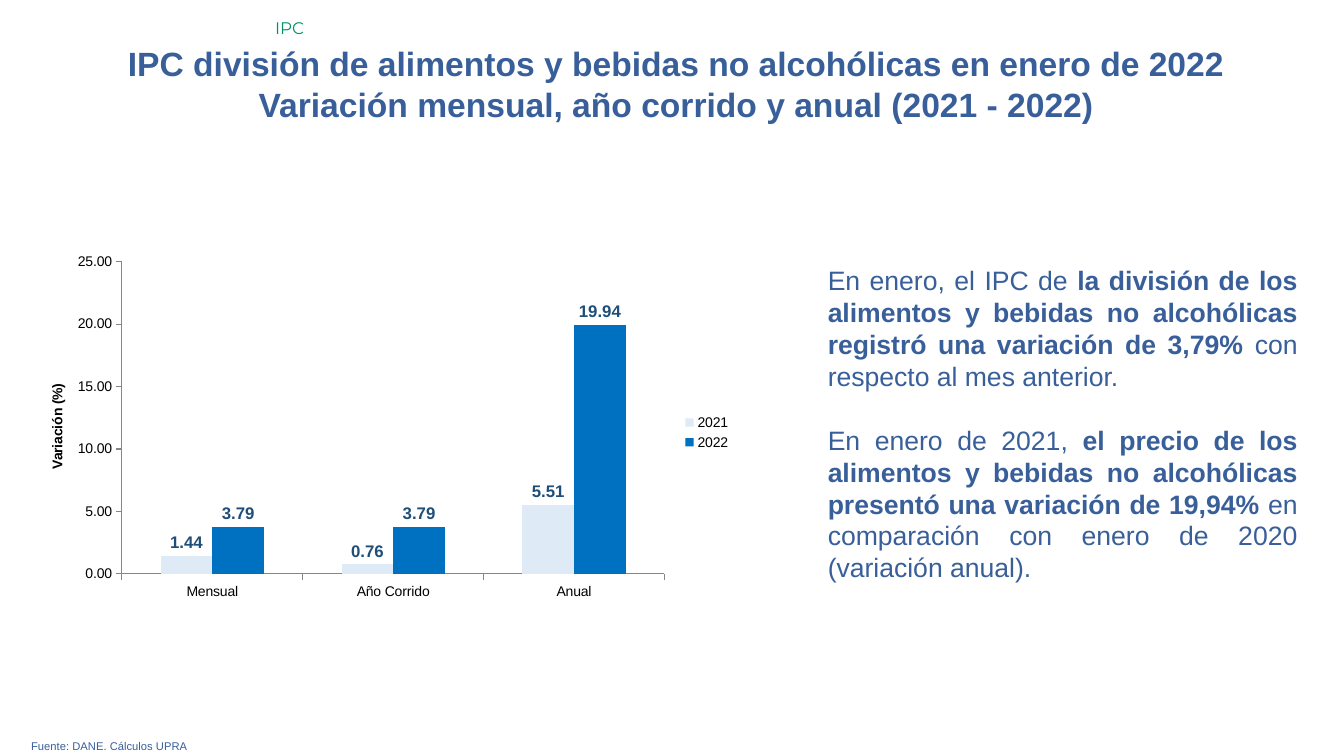
from lxml import etree
from pptx import Presentation
from pptx.chart.data import CategoryChartData
from pptx.dml.color import RGBColor
from pptx.enum.chart import (XL_CHART_TYPE, XL_LABEL_POSITION, XL_LEGEND_POSITION,
                             XL_TICK_LABEL_POSITION, XL_TICK_MARK)
from pptx.enum.text import MSO_ANCHOR, MSO_AUTO_SIZE, PP_ALIGN
from pptx.oxml import parse_xml
from pptx.oxml.ns import nsdecls, qn
from pptx.util import Inches, Pt

BLUE = RGBColor(0x39, 0x5F, 0x9B)
GREEN = RGBColor(0x00, 0x92, 0x67)
PALE_BAR = RGBColor(0xDE, 0xEB, 0xF7)
STRONG_BAR = RGBColor(0x00, 0x70, 0xC0)
LABEL_BLUE = RGBColor(0x1F, 0x4E, 0x79)
AXIS_GREY = RGBColor(0x86, 0x86, 0x86)
BLACK = RGBColor(0x00, 0x00, 0x00)


class SlideBuilder:
    """Places elements on a grid of 100 columns by 100 rows."""

    font_name = "Arial"
    number_format = "#,##0.00"

    def __init__(self, presentation):
        self.column = presentation.slide_width / 100
        self.row = presentation.slide_height / 100
        self.slide = presentation.slides.add_slide(presentation.slide_layouts[1])

    def area(self, left, top, width, height):
        return (round(left * self.column), round(top * self.row),
                round(width * self.column), round(height * self.row))

    def style(self, font, size, color, bold=False, name=None):
        font.name = name or self.font_name
        font.size = Pt(size)
        font.bold = bold
        font.color.rgb = color

    def fill_text(self, shape, paragraphs, size, color, align, gap=0, bold=False, name=None):
        """Each paragraph is a list of (text, bold) pieces."""
        frame = shape.text_frame
        frame.word_wrap = True
        frame.auto_size = MSO_AUTO_SIZE.NONE
        frame.vertical_anchor = MSO_ANCHOR.TOP
        for index, pieces in enumerate(paragraphs):
            paragraph = frame.add_paragraph() if index else frame.paragraphs[0]
            paragraph.alignment = align
            paragraph.space_before = Pt(gap if index else 0)
            for text, strong in pieces:
                run = paragraph.add_run()
                run.text = text
                self.style(run.font, size, color, bold or strong, name)

    def title(self, lines, area):
        shape = self.slide.shapes.title
        shape.left, shape.top, shape.width, shape.height = self.area(*area)
        self.fill_text(shape, [[(line, True)] for line in lines], 24, BLUE, PP_ALIGN.CENTER)

    def body(self, paragraphs, area):
        shape = self.slide.placeholders[1]
        shape.left, shape.top, shape.width, shape.height = self.area(*area)
        self.fill_text(shape, paragraphs, 19, BLUE, PP_ALIGN.JUSTIFY, gap=22.8)
        for paragraph in shape.text_frame.paragraphs:
            properties = paragraph._p.get_or_add_pPr()
            properties.set("marL", "0")
            properties.set("indent", "0")
            etree.SubElement(properties, qn("a:buNone"))

    def text(self, content, area, size, color, align, name=None):
        shape = self.slide.shapes.add_textbox(*self.area(*area))
        self.fill_text(shape, [[(content, False)]], size, color, align, name=name)

    def column_chart(self, categories, series, value_title, area, plot_area):
        data = CategoryChartData(number_format=self.number_format)
        data.categories = categories
        for name, values, _ in series:
            data.add_series(name, values)
        chart = self.slide.shapes.add_chart(
            XL_CHART_TYPE.COLUMN_CLUSTERED, *self.area(*area), data).chart
        self.style(chart.font, 10, BLACK)
        chart.has_title = False
        chart.has_legend = True
        chart.legend.position = XL_LEGEND_POSITION.RIGHT
        chart.legend.include_in_layout = False

        # Columns and their value labels
        plot = chart.plots[0]
        plot.gap_width = 150
        plot.overlap = 0
        plot.vary_by_categories = False
        for column_series, (_, _, color) in zip(plot.series, series):
            column_series.format.fill.solid()
            column_series.format.fill.fore_color.rgb = color
            labels = column_series.data_labels
            labels.show_value = True
            labels.position = XL_LABEL_POSITION.OUTSIDE_END
            labels.number_format = self.number_format
            labels.number_format_is_linked = False
            self.style(labels.font, 12, LABEL_BLUE, bold=True)

        # Axes
        for axis in (chart.category_axis, chart.value_axis):
            axis.has_major_gridlines = False
            axis.major_tick_mark = XL_TICK_MARK.OUTSIDE
            axis.minor_tick_mark = XL_TICK_MARK.NONE
            axis.format.line.color.rgb = AXIS_GREY
            axis.format.line.width = Pt(0.75)
        chart.category_axis.tick_label_position = XL_TICK_LABEL_POSITION.LOW
        value_axis = chart.value_axis
        value_axis.minimum_scale, value_axis.maximum_scale, value_axis.major_unit = 0, 25, 5
        value_axis.tick_labels.number_format = self.number_format
        value_axis.tick_labels.number_format_is_linked = False
        title_frame = value_axis.axis_title.text_frame
        title_frame.text = value_title
        self.style(title_frame.paragraphs[0].runs[0].font, 10, BLACK, bold=True)
        self.place_plot(chart, plot_area)

    def place_plot(self, chart, plot_area):
        """Fixes the inner plot area as shares of the chart's size."""
        plot_element = chart._chartSpace.chart.plotArea
        for layout in plot_element.findall(qn("c:layout")):
            plot_element.remove(layout)
        modes = "".join(f'<c:{side}Mode val="edge"/>' for side in "xy")
        sizes = "".join(f'<c:{side} val="{share}"/>' for side, share in zip("xywh", plot_area))
        plot_element.insert(0, parse_xml(
            f'<c:layout {nsdecls("c")}><c:manualLayout><c:layoutTarget val="inner"/>'
            f'{modes}{sizes}</c:manualLayout></c:layout>'))


def main():
    presentation = Presentation()
    presentation.slide_width = Inches(13.33)
    presentation.slide_height = Inches(7.5)
    builder = SlideBuilder(presentation)

    # Heading
    builder.title(["IPC división de alimentos y bebidas no alcohólicas en enero de 2022",
                   "Variación mensual, año corrido y anual (2021 - 2022)"],
                  (3.38, 5.07, 93.85, 12.13))
    builder.text("IPC", (19.73, 1.73, 80.27, 4), 12, GREEN, PP_ALIGN.LEFT, "Montserrat")

    # Chart
    builder.column_chart(
        ["Mensual", "Año Corrido", "Anual"],
        [("2021", (1.44, 0.76, 5.51), PALE_BAR), ("2022", (3.79, 3.79, 19.94), STRONG_BAR)],
        "Variación (%)", (3.38, 33.2, 51.76, 48), (0.11, 0.03, 0.78, 0.86))

    # Commentary
    builder.body([
        [("En enero, el IPC de ", False),
         ("la división de los alimentos y bebidas no alcohólicas registró una variación "
          "de 3,79% ", True),
         ("con respecto al mes anterior.", False)],
        [("En enero de 2021, ", False),
         ("el precio de los alimentos y bebidas no alcohólicas presentó una variación "
          "de 19,94% ", True),
         ("en comparación con enero de 2020 (variación anual).", False)],
    ], (60.84, 34.27, 36.46, 48.27))

    # Source
    builder.text("Fuente: DANE. Cálculos UPRA", (1.58, 97.2, 96.85, 3.2), 8, BLUE,
                 PP_ALIGN.JUSTIFY)
    presentation.save("out.pptx")


if __name__ == "__main__":
    main()
